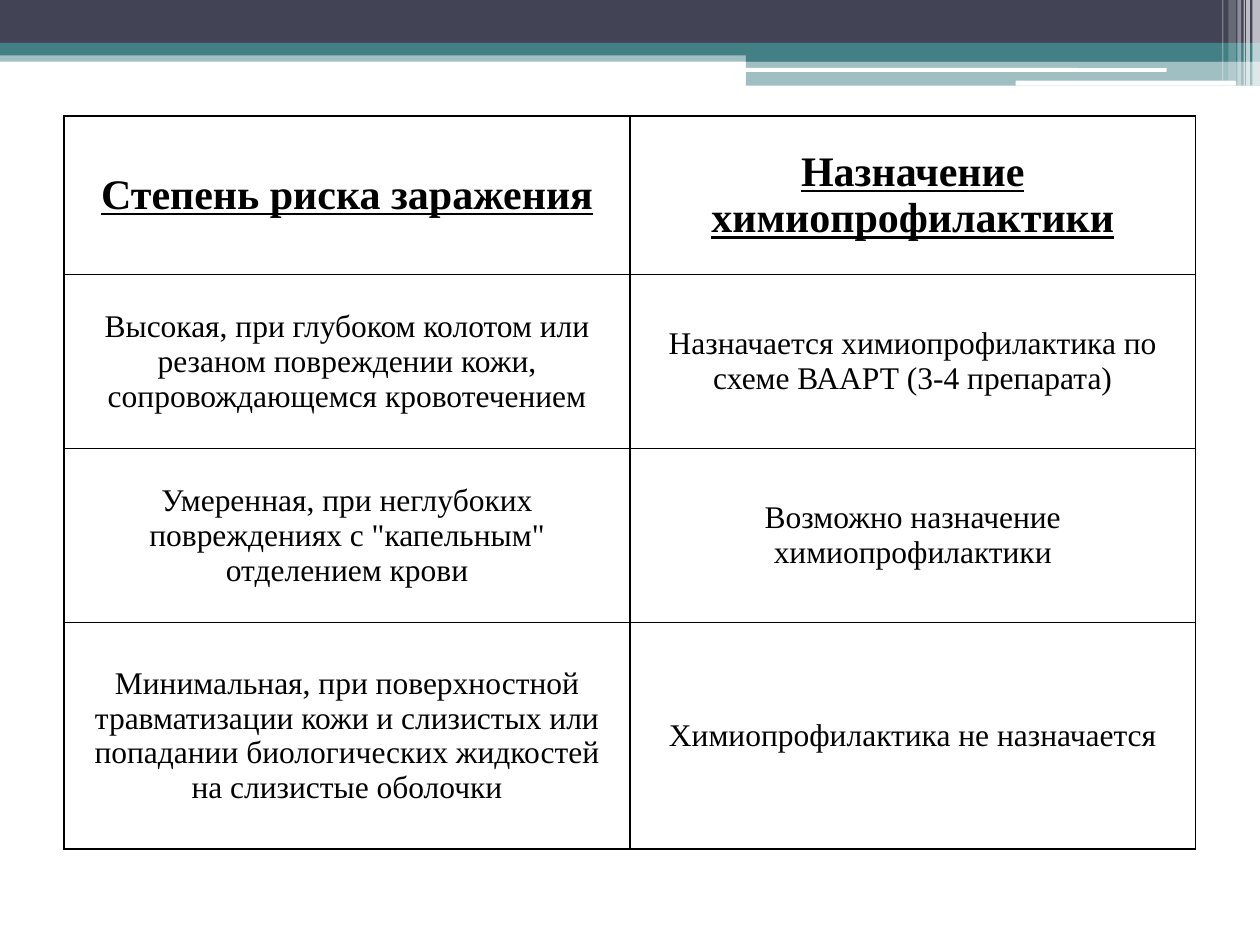
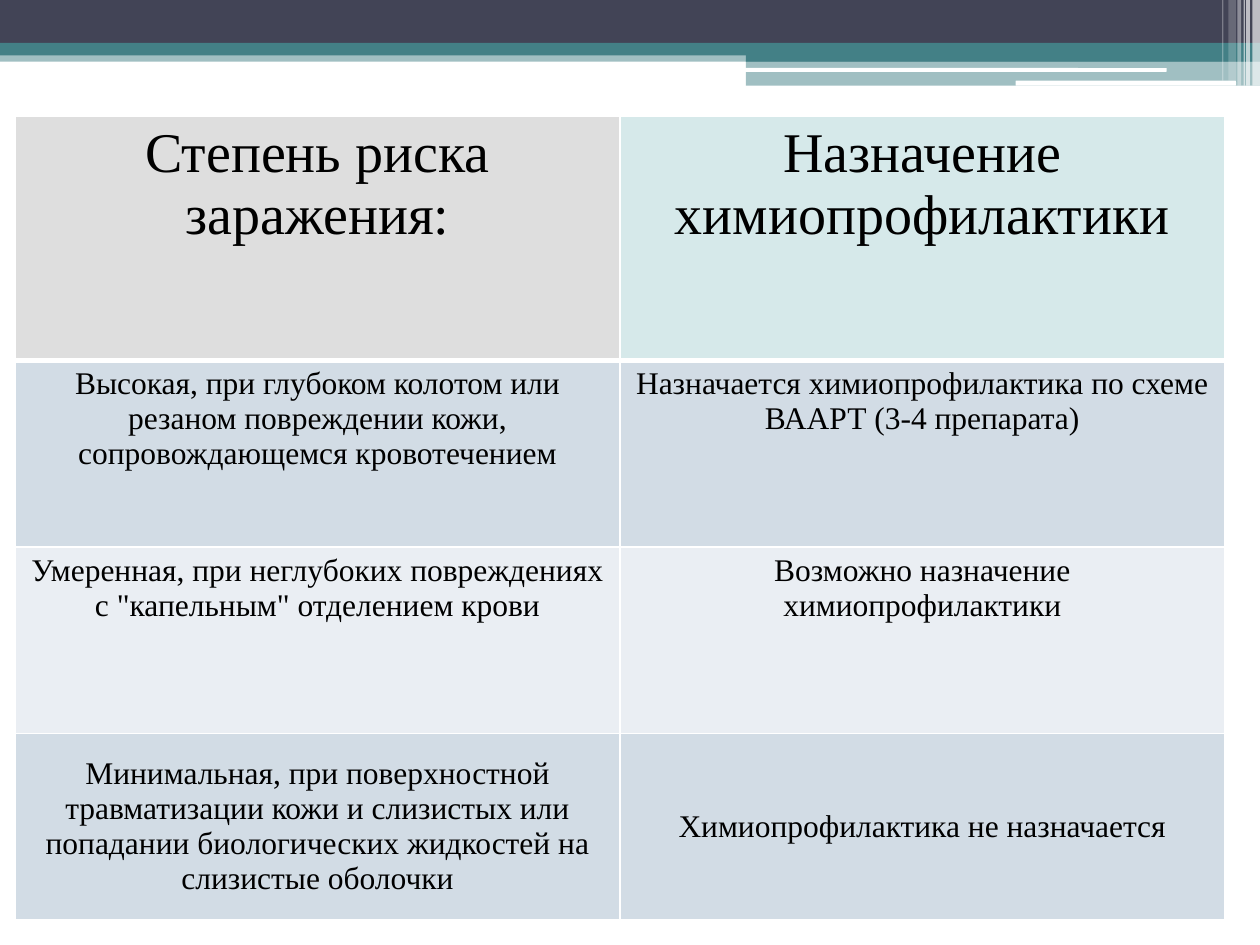
"""Two slides on HIV infection risk and chemoprophylaxis, each a table under a shared banner."""
from lxml import etree
from pptx import Presentation
from pptx.dml.color import RGBColor
from pptx.enum import shapes, text
from pptx.oxml.ns import qn
from pptx.util import Inches, Pt

SLATE, TEAL, WHITE, BLACK = "424456", "438086", "FFFFFF", "000000"
RECT, ROUND = shapes.MSO_SHAPE.RECTANGLE, shapes.MSO_SHAPE.ROUNDED_RECTANGLE
MIDDLE, TOP = text.MSO_ANCHOR.MIDDLE, text.MSO_ANCHOR.TOP

BANNER = [
    (RECT, 0, 0.4, 10, 0.09, TEAL, 50),
    (RECT, 0, 0, 10, 0.34, SLATE, 100),
    (RECT, 0, 0.34, 10, 0.1, TEAL, 100),
    (RECT, 5.92, 0.39, 4.08, 0.1, TEAL, 100),
    (RECT, 5.92, 0.48, 4.08, 0.2, TEAL, 50),
    (ROUND, 5.91, 0.54, 3.35, 0.03, WHITE, 100),
    (ROUND, 8.06, 0.64, 1.75, 0.04, WHITE, 100),
    (RECT, 9.94, 0, 0.06, 0.68, WHITE, 65),
    (RECT, 9.89, 0, 0.03, 0.68, WHITE, 65),
    (RECT, 9.87, 0, 0.01, 0.68, WHITE, 60),
    (RECT, 9.82, 0, 0.03, 0.68, WHITE, 40),
    (RECT, 9.75, 0, 0.06, 0.64, WHITE, 20),
    (RECT, 9.7, 0, 0.01, 0.64, WHITE, 30),
]

RISKS = [
    ("Высокая, при глубоком колотом или резаном повреждении кожи, "
     "сопровождающемся кровотечением",
     "Назначается химиопрофилактика по схеме ВААРТ (3-4 препарата)"),
    ('Умеренная, при неглубоких повреждениях с "капельным" отделением крови',
     "Возможно назначение химиопрофилактики"),
    ("Минимальная, при поверхностной травматизации кожи и слизистых или попадании "
     "биологических жидкостей на слизистые оболочки",
     "Химиопрофилактика не назначается"),
]

DARK_BAND, LIGHT_BAND = ["D2DCE5"] * 2, ["EAEEF3"] * 2
SLIDES = [
    {"heading": ("Степень риска заражения", "Назначение химиопрофилактики"),
     "heading_font": {"size": Pt(24), "bold": True, "underline": True},
     "left": 0.51, "column": 4.49, "rows": [1.26, 1.38, 1.38, 1.8],
     "anchors": [MIDDLE] * 4, "fills": [[None] * 2] * 4,
     "border": BLACK, "heading_rule": 1},
    {"heading": ("Степень риска заражения:", "Назначение химиопрофилактики"),
     "heading_font": {"size": Pt(32), "bold": False, "underline": False},
     "left": 0.12, "column": 4.8, "rows": [1.94, 1.48, 1.48, 1.48],
     "anchors": [TOP, TOP, TOP, MIDDLE],
     "fills": [["DEDEDE", "D6E9EA"], DARK_BAND, LIGHT_BAND, DARK_BAND],
     "border": WHITE, "heading_rule": 3},
]
BODY_FONT = {"size": Pt(18), "bold": False, "underline": False}


def paint(fill, color):
    if color is None:
        fill.background()
    else:
        fill.solid()
        fill.fore_color.rgb = RGBColor.from_string(color)


def add_borders(cell, color, widths):
    properties = cell._tc.get_or_add_tcPr()
    for position, (side, width) in enumerate(widths.items()):
        line = etree.Element(qn(f"a:ln{side}"), w=str(Pt(width)))
        solid = etree.SubElement(line, qn("a:solidFill"))
        etree.SubElement(solid, qn("a:srgbClr"), val=color)
        properties.insert(position, line)


deck = Presentation()
deck.slide_width, deck.slide_height = Inches(10), Inches(7.5)

for content in SLIDES:
    slide = deck.slides.add_slide(deck.slide_layouts[6])
    paint(slide.background.fill, WHITE)

    for preset, left, top, width, height, color, opacity in BANNER:
        strip = slide.shapes.add_shape(
            preset, Inches(left), Inches(top), Inches(width), Inches(height))
        strip.shadow.inherit = False
        strip.line.fill.background()
        paint(strip.fill, color)
        if opacity < 100:
            tint = strip._element.spPr.find(qn("a:solidFill")).find(qn("a:srgbClr"))
            etree.SubElement(tint, qn("a:alpha"), val=str(opacity * 1000))

    risk_table = slide.shapes.add_table(
        4, 2, Inches(content["left"]), Inches(0.92),
        Inches(2 * content["column"]), Inches(sum(content["rows"]))).table
    risk_table.first_row = risk_table.horz_banding = False
    for column in risk_table.columns:
        column.width = Inches(content["column"])

    for r, wording in enumerate([content["heading"], *RISKS]):
        risk_table.rows[r].height = Inches(content["rows"][r])
        font_format = BODY_FONT if r else content["heading_font"]
        rule = content["heading_rule"]
        widths = {"L": 1, "R": 1, "T": rule if r == 1 else 1, "B": 1 if r else rule}
        for c, phrase in enumerate(wording):
            cell = risk_table.cell(r, c)
            cell.text = phrase
            cell.vertical_anchor = content["anchors"][r]
            paint(cell.fill, content["fills"][r][c])
            add_borders(cell, content["border"], widths)
            paragraph = cell.text_frame.paragraphs[0]
            paragraph.alignment = text.PP_ALIGN.CENTER
            font = paragraph.runs[0].font
            font.color.rgb = RGBColor.from_string(BLACK)
            for attribute, value in {"name": "Times New Roman", **font_format}.items():
                setattr(font, attribute, value)

deck.save("out.pptx")
